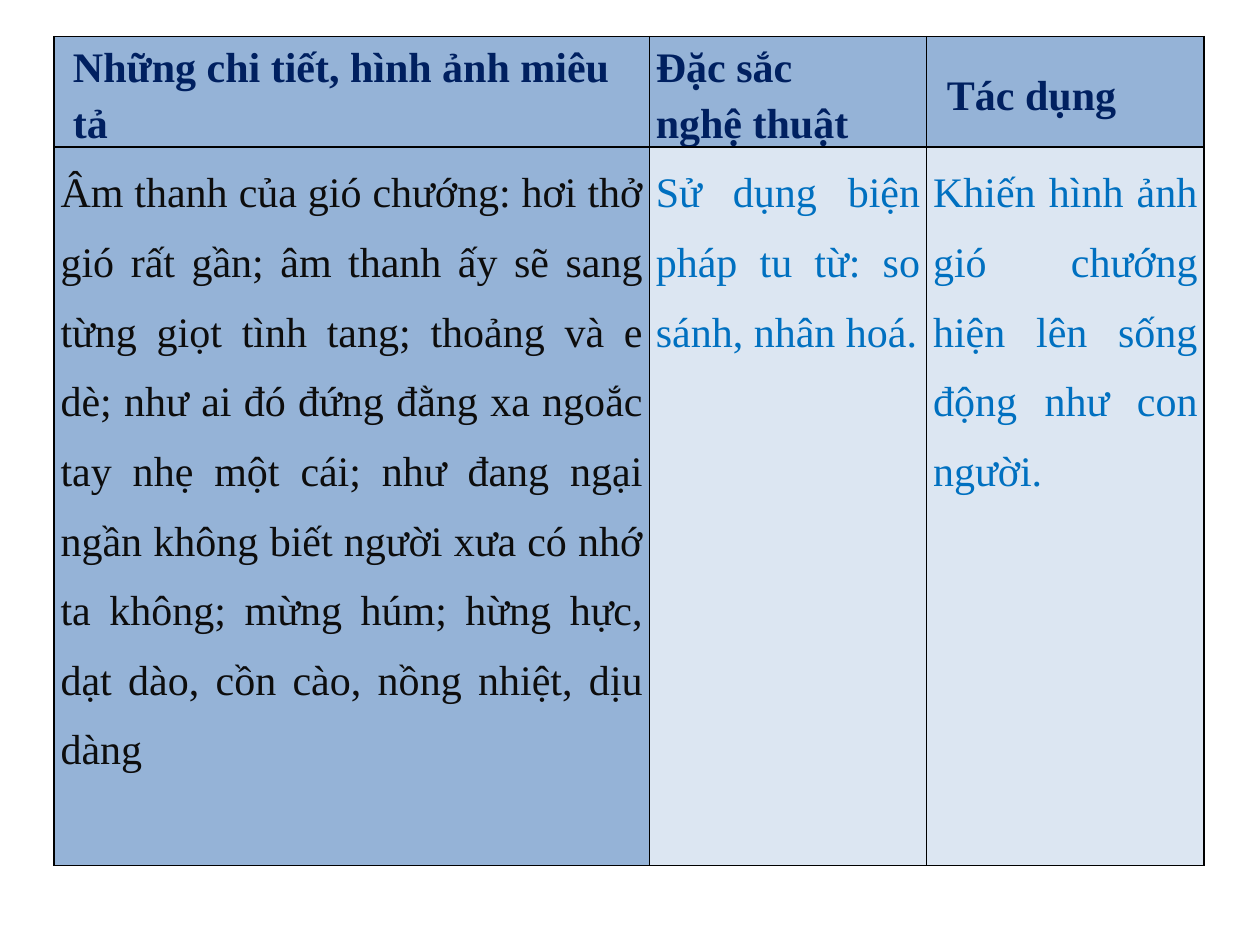
import lxml.etree
import pptx
import pptx.dml.color
import pptx.enum.text
import pptx.oxml.ns
import pptx.util

Cm = pptx.util.Cm
Pt = pptx.util.Pt
qn = pptx.oxml.ns.qn
ALIGN = pptx.enum.text.PP_ALIGN
ANCHOR = pptx.enum.text.MSO_ANCHOR

COLORS = {
    "border": "000000",
    "header_text": "002060",
    "strong_fill": "95B3D7",
    "light_fill": "DCE6F2",
    "detail_text": "0D0D0D",
    "answer_text": "0070C0",
}
COLUMN_WIDTHS = [Cm(12), Cm(5.59), Cm(5.59)]
ROW_HEIGHTS = [Cm(2.22), Cm(14.48)]

HEADERS = [
    ("Những chi tiết, hình ảnh miêu tả", ANCHOR.TOP, Cm(0.25)),
    ("Đặc sắc\nnghệ thuật", ANCHOR.MIDDLE, Cm(0)),
    ("Tác dụng", ANCHOR.MIDDLE, Cm(0.28)),
]
ANSWERS = [
    ("Âm thanh của gió chướng: hơi thở gió rất gần; âm thanh ấy sẽ sang từng giọt "
     "tình tang; thoảng và e dè; như ai đó đứng đằng xa ngoắc tay nhẹ một cái; "
     "như đang ngại ngần không biết người xưa có nhớ ta không; mừng húm; hừng hực, "
     "dạt dào, cồn cào, nồng nhiệt, dịu dàng", "detail_text", "strong_fill"),
    ("Sử dụng biện pháp tu từ: so sánh, nhân hoá.", "answer_text", "light_fill"),
    ("Khiến hình ảnh gió chướng hiện lên sống động như con người.",
     "answer_text", "light_fill"),
]


def rgb(name):
    return pptx.dml.color.RGBColor.from_string(COLORS[name])


def add_borders(cell):
    properties = cell._tc.get_or_add_tcPr()
    for side in ("lnL", "lnR", "lnT", "lnB"):
        line = lxml.etree.SubElement(properties, qn(f"a:{side}"), w=str(Pt(1)))
        fill = lxml.etree.SubElement(line, qn("a:solidFill"))
        lxml.etree.SubElement(fill, qn("a:srgbClr"), val=COLORS["border"])


def fill_cell(cell, text, color, background, spacing, align=ALIGN.LEFT,
              anchor=ANCHOR.TOP, indent=0, bold=False):
    add_borders(cell)
    cell.fill.solid()
    cell.fill.fore_color.rgb = rgb(background)
    cell.margin_left = cell.margin_right = Cm(0.13)
    cell.margin_top = cell.margin_bottom = 0
    cell.vertical_anchor = anchor
    cell.text_frame.text = text
    for paragraph in cell.text_frame.paragraphs:
        paragraph.alignment = align
        paragraph.line_spacing = spacing
        paragraph._p.get_or_add_pPr().set("marL", str(indent))
        for run in paragraph.runs:
            run.font.name = "Times New Roman"
            run.font.size = Pt(24)
            run.font.bold = bold
            run.font.color.rgb = rgb(color)


def add_analysis_table(slide):
    analysis = slide.shapes.add_table(
        len(ROW_HEIGHTS), len(COLUMN_WIDTHS), Cm(1.09), Cm(0.74),
        sum(COLUMN_WIDTHS), sum(ROW_HEIGHTS)).table
    analysis.first_row = False
    analysis.horz_banding = False
    for column, width in zip(analysis.columns, COLUMN_WIDTHS):
        column.width = width
    for row, height in zip(analysis.rows, ROW_HEIGHTS):
        row.height = height
    return analysis


def main():
    presentation = pptx.Presentation()
    presentation.slide_width = Cm(25.4)
    presentation.slide_height = Cm(19.05)
    slide = presentation.slides.add_slide(presentation.slide_layouts[6])
    analysis = add_analysis_table(slide)
    for column, (text, anchor, indent) in enumerate(HEADERS):
        fill_cell(analysis.cell(0, column), text, "header_text", "strong_fill",
                  1.19, anchor=anchor, indent=indent, bold=True)
    for column, (text, color, background) in enumerate(ANSWERS):
        fill_cell(analysis.cell(1, column), text, color, background,
                  1.5, align=ALIGN.JUSTIFY)
    presentation.save("out.pptx")


if __name__ == "__main__":
    main()
